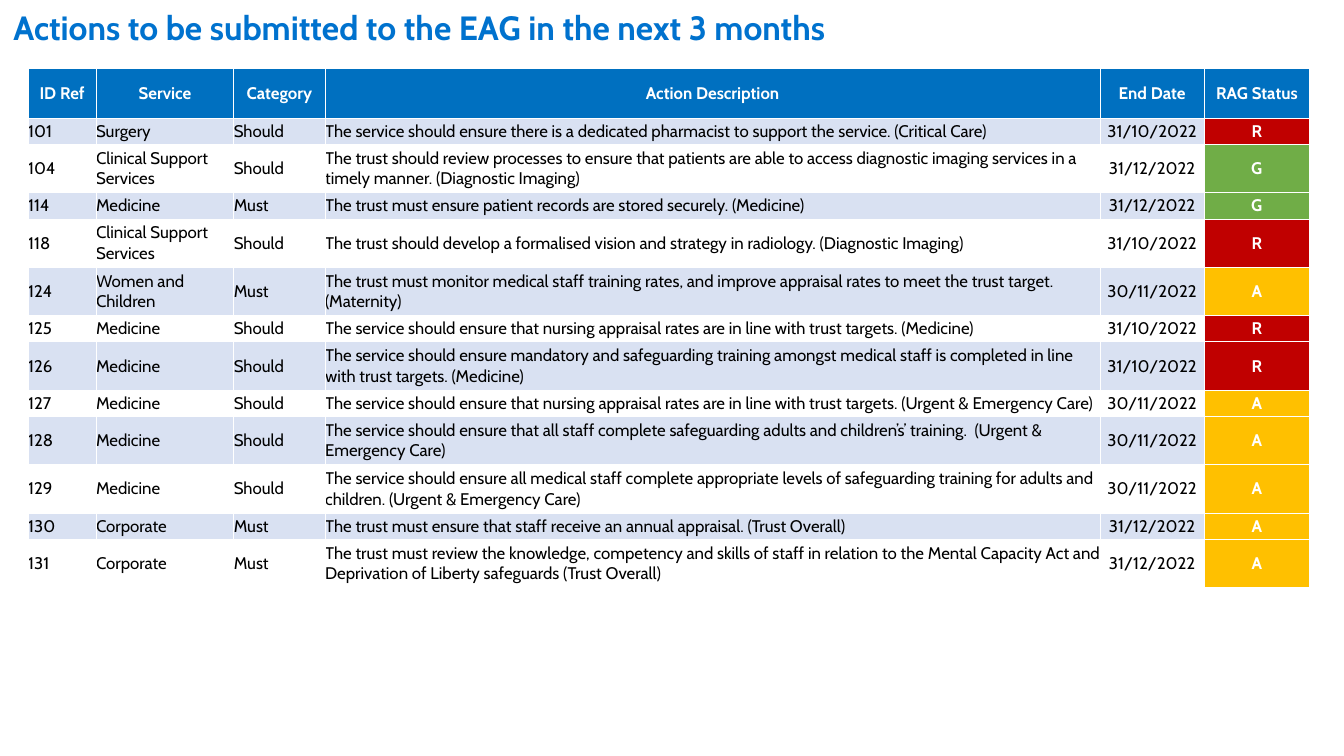
import pptx
import pptx.dml.color
import pptx.enum.text
import pptx.util
from lxml import etree
from pptx.oxml.ns import qn

PX = pptx.util.Inches(1) // 200
ALIGN = pptx.enum.text.PP_ALIGN
ANCHOR = pptx.enum.text.MSO_ANCHOR

FONT = "Cabin"
WHITE, BLACK = "FFFFFF", "000000"
TITLE_BLUE, HEADER_BLUE, BAND = "0072CE", "0070C0", "D9E1F2"
RAG_COLOURS = {"R": "C00000", "A": "FFC000", "G": "70AD47"}

COLUMN_WIDTHS = [101, 205, 136, 1153, 155, 157]
HEADER_HEIGHT, SINGLE_HEIGHT, DOUBLE_HEIGHT = 74, 39, 72
CENTRED_COLUMNS = (4, 5)
RAG_COLUMN = 5

HEADERS = ["ID Ref", "Service", "Category", "Action Description", "End Date", "RAG Status"]
ACTIONS = [
    ["101", "Surgery", "Should",
     "The service should ensure there is a dedicated pharmacist to support the service. (Critical Care)",
     "31/10/2022", "R"],
    ["104", "Clinical Support Services", "Should",
     "The trust should review processes to ensure that patients are able to access diagnostic imaging "
     "services in a timely manner. (Diagnostic Imaging)",
     "31/12/2022", "G"],
    ["114", "Medicine", "Must",
     "The trust must ensure patient records are stored securely. (Medicine)",
     "31/12/2022", "G"],
    ["118", "Clinical Support Services", "Should",
     "The trust should develop a formalised vision and strategy in radiology. (Diagnostic Imaging)",
     "31/10/2022", "R"],
    ["124", "Women and Children", "Must",
     "The trust must monitor medical staff training rates, and improve appraisal rates to meet the "
     "trust target.  (Maternity)",
     "30/11/2022", "A"],
    ["125", "Medicine", "Should",
     "The service should ensure that nursing appraisal rates are in line with trust targets. (Medicine)",
     "31/10/2022", "R"],
    ["126", "Medicine", "Should",
     "The service should ensure mandatory and safeguarding training amongst medical staff is completed "
     "in line with trust targets. (Medicine)",
     "31/10/2022", "R"],
    ["127", "Medicine", "Should",
     "The service should ensure that nursing appraisal rates are in line with trust targets. "
     "(Urgent & Emergency Care)",
     "30/11/2022", "A"],
    ["128", "Medicine", "Should",
     "The service should ensure that all staff complete safeguarding adults and children’s’ training.  "
     "(Urgent & Emergency Care)",
     "30/11/2022", "A"],
    ["129", "Medicine", "Should",
     "The service should ensure all medical staff complete appropriate levels of safeguarding training "
     "for adults and children. (Urgent & Emergency Care)",
     "30/11/2022", "A"],
    ["130", "Corporate", "Must",
     "The trust must ensure that staff receive an annual appraisal. (Trust Overall)",
     "31/12/2022", "A"],
    ["131", "Corporate", "Must",
     "The trust must review the knowledge, competency and skills of staff in relation to the Mental "
     "Capacity Act and Deprivation of Liberty safeguards (Trust Overall)",
     "31/12/2022", "A"],
]
DOUBLE_ROWS = {"104", "118", "124", "126", "128", "129", "131"}


def colour(value):
    return pptx.dml.color.RGBColor.from_string(value)


def apply(target, values):
    for name, value in values.items():
        setattr(target, name, value)


def format_text(para, size, hex_colour, bold, align):
    para.alignment = align
    apply(para.font, {"name": FONT, "size": pptx.util.Pt(size), "bold": bold})
    para.font.color.rgb = colour(hex_colour)


def add_title(page, text):
    box = page.shapes.title
    apply(box, {"left": 0, "top": 0, "width": 1950 * PX, "height": 100 * PX})
    frame = box.text_frame
    frame.text = text
    apply(frame, {"word_wrap": True, "vertical_anchor": ANCHOR.TOP,
                  "auto_size": pptx.enum.text.MSO_AUTO_SIZE.NONE})
    format_text(frame.paragraphs[0], 18, TITLE_BLUE, True, ALIGN.LEFT)


def add_borders(cell, sides):
    properties = cell._tc.get_or_add_tcPr()
    for side in sides:
        line = etree.SubElement(properties, qn(f"a:ln{side}"), w=str(pptx.util.Pt(0.5)))
        fill = etree.SubElement(line, qn("a:solidFill"))
        etree.SubElement(fill, qn("a:srgbClr"), val=WHITE)


def fill_cell(cell, text, fill, text_colour, bold, align, sides):
    cell.text = text
    apply(cell, {"margin_left": 0, "margin_right": 0, "margin_top": 0, "margin_bottom": 0,
                 "vertical_anchor": ANCHOR.MIDDLE})
    add_borders(cell, sides)
    if fill:
        cell.fill.solid()
        cell.fill.fore_color.rgb = colour(fill)
    else:
        cell.fill.background()
    format_text(cell.text_frame.paragraphs[0], 9, text_colour, bold, align)


def add_action_table(page, left, top):
    heights = [HEADER_HEIGHT] + [
        DOUBLE_HEIGHT if action[0] in DOUBLE_ROWS else SINGLE_HEIGHT for action in ACTIONS]
    table = page.shapes.add_table(
        len(heights), len(COLUMN_WIDTHS), left * PX, top * PX,
        sum(COLUMN_WIDTHS) * PX, sum(heights) * PX).table
    apply(table, {"first_row": False, "horz_banding": False})
    for column, width in zip(table.columns, COLUMN_WIDTHS):
        column.width = width * PX
    for row, height in zip(table.rows, heights):
        row.height = height * PX

    for row_index, texts in enumerate([HEADERS] + ACTIONS):
        is_header = row_index == 0
        band = BAND if row_index % 2 else None
        for column_index, text in enumerate(texts):
            is_rag = column_index == RAG_COLUMN
            strong = is_header or is_rag
            fill = HEADER_BLUE if is_header else RAG_COLOURS[text] if is_rag else band
            centred = is_header or column_index in CENTRED_COLUMNS
            fill_cell(table.cell(row_index, column_index), text, fill,
                      WHITE if strong else BLACK, strong,
                      ALIGN.CENTER if centred else ALIGN.LEFT,
                      "LTB" if is_rag else "LRTB")


def main():
    deck = pptx.Presentation()
    apply(deck, {"slide_width": 2000 * PX, "slide_height": 1125 * PX})
    page = deck.slides.add_slide(deck.slide_layouts[5])

    # Heading
    add_title(page, "Actions to be submitted to the EAG in the next 3 months")

    # Actions with their RAG status
    add_action_table(page, 42, 102)

    deck.save("out.pptx")


if __name__ == "__main__":
    main()
